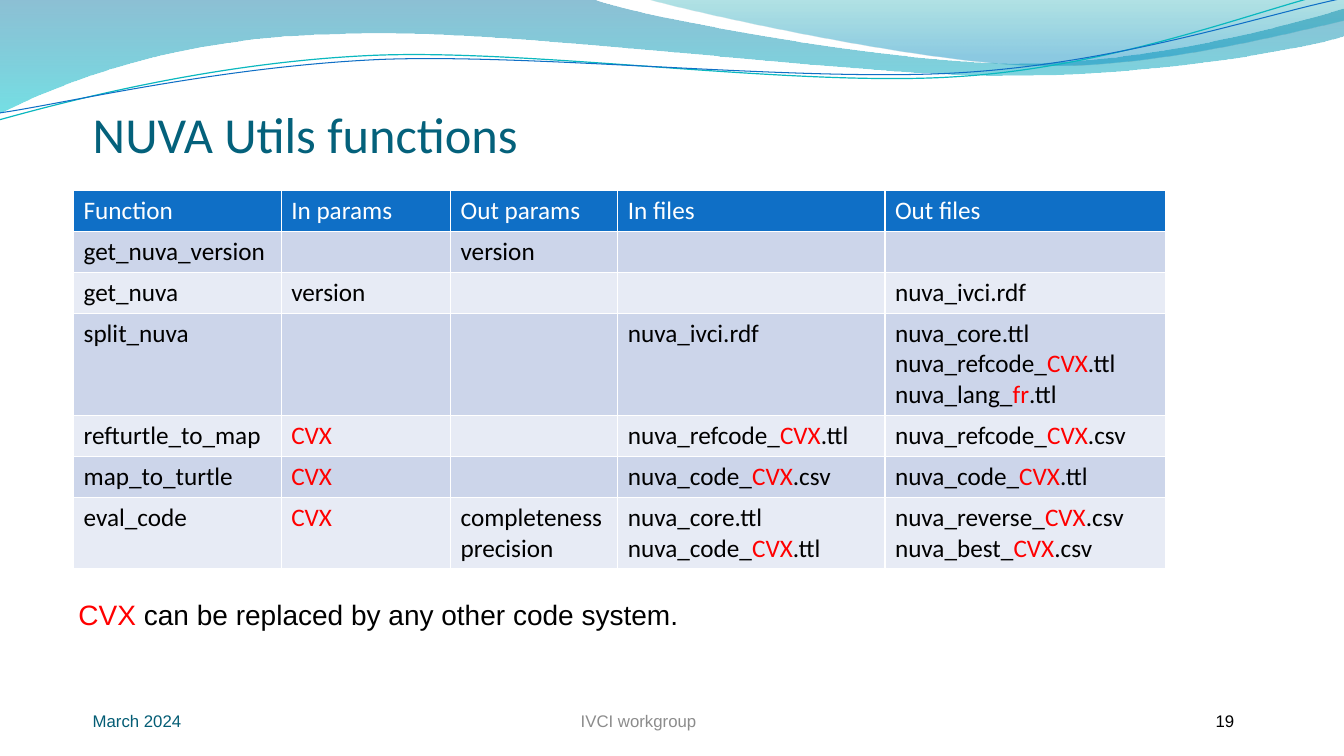
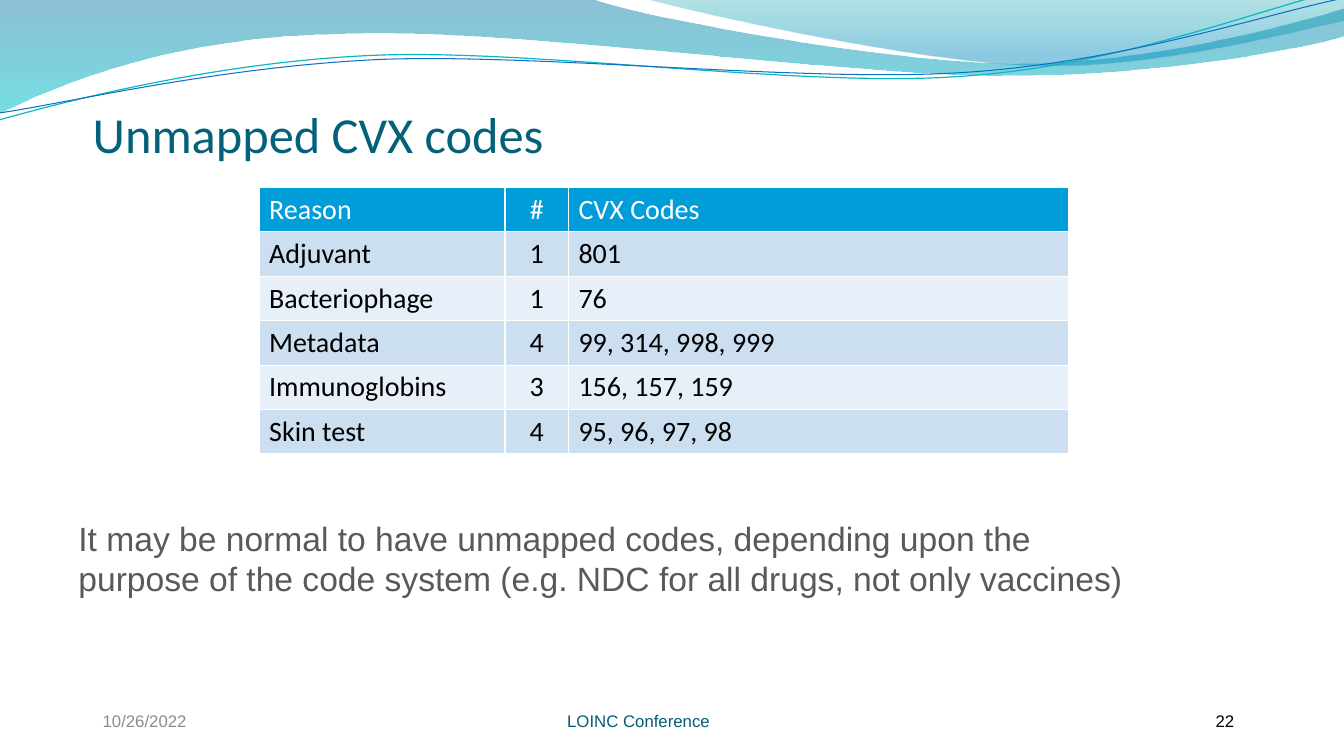
from collections import namedtuple
from math import cos, radians, sin

from lxml.etree import SubElement
from pptx import Presentation
from pptx.dml.color import RGBColor
from pptx.enum.text import MSO_ANCHOR, MSO_AUTO_SIZE, PP_ALIGN
from pptx.oxml.ns import qn
from pptx.util import Inches, Pt

# The slide is a grid of 40/3 columns by 7.5 rows, each one inch.
Box = namedtuple("Box", "left top width height")
SLIDE_WIDTH, SLIDE_HEIGHT = 40 / 3, 7.5
TITLE_BOX = Box(0.92, 0.77, 11.75, 0.85)
DATE_BOX = Box(0.92, 6.95, 3, 0.4)
FOOTER_BOX = Box(3.89, 6.95, 4.89, 0.4)
NUMBER_BOX = Box(11.56, 6.95, 1.11, 0.4)
ROW_HEIGHT = 0.4

HEADING_FONT, TEXT_FONT = "Calibri", "Arial"
BLACK, WHITE, RED = "000000", "FFFFFF", "FF0000"
TITLE_TEAL, FOOTER_TEAL = "04617B", "045D75"
FOOTER_GRAY, NOTE_GRAY = "8C8C8C", "595959"
CORE_COLORS = ("0F6FC6", "CCD5EA", "E7EBF5")
REASON_COLORS = ("009DD9", "CCDFF1", "E7EFF8")
FLUSH = (0, 0, 0, 0)
PADDED = (0.1, 0.05, 0.1, 0.05)

# Each band: outline of lines (one point) and curves (three points), then
# gradient stops as position, colour and opacity.
BANDS = [
    ([[(0, 0)], [(5.87, -0.01)],
      [(6.34, 0.17), (8.85, 0.63), (10.11, 0.63)],
      [(11.38, 0.63), (12.78, 0.26), (13.33, 0.09)], [(13.35, 0.36)],
      [(13.11, 0.44), (11.6, 0.76), (9.94, 0.75)],
      [(8.29, 0.75), (5.09, 0.28), (3.43, 0.34)],
      [(1.72, 0.36), (0.61, 0.83), (-0.01, 1.13)], [(0, 0)]],
     [(0, "0074A1", 45), (1, "00C6CF", 55)]),
    ([[(6.39, -0.01)],
      [(6.79, 0.11), (9.09, 0.62), (10.25, 0.65)],
      [(11.41, 0.69), (12.82, 0.32), (13.33, 0.21)], [(13.33, 0)],
      [(6.39, -0.01)]],
     [(0, "00A1A9", 30), (0.8, "008BBF", 45)]),
]
# Each strand: outline, centre of its turn, colour and line width.
STRAND_TURN = -2.7
STRANDS = [
    ([[(-0.01, 1.19)],
      [(0.64, 1.01), (2.11, 0.62), (3.69, 0.55)],
      [(5.27, 0.48), (7.9, 0.87), (9.5, 0.76)],
      [(11.1, 0.66), (12.52, 0.08), (13.31, -0.1)]],
     (6.65, 0.57), "0AB8BF", 0.85),
    ([[(0, 1.12)],
      [(0.63, 1.03), (2.18, 0.66), (3.78, 0.59)],
      [(5.37, 0.53), (7.96, 0.82), (9.55, 0.72)],
      [(11.15, 0.62), (12.55, 0.14), (13.34, -0.02)]],
     (6.67, 0.59), "0F6FC6", 0.75),
]

# Text between asterisks takes the accent colour, a bar breaks the line.
FUNCTION_ROWS = [
    ("Function", "In params", "Out params", "In files", "Out files"),
    ("get_nuva_version", "", "version", "", ""),
    ("get_nuva", "version", "", "", "nuva_ivci.rdf"),
    ("split_nuva", "", "", "nuva_ivci.rdf",
     "nuva_core.ttl|nuva_refcode_*CVX*.ttl\nnuva_lang_*fr*.ttl"),
    ("refturtle_to_map", "*CVX*", "", "nuva_refcode_*CVX*.ttl",
     "nuva_refcode_*CVX*.csv"),
    ("map_to_turtle", "*CVX*", "", "nuva_code_*CVX*.csv",
     "nuva_code_*CVX*.ttl"),
    ("eval_code", "*CVX*", "completeness|precision",
     "nuva_core.ttl\nnuva_code_*CVX*.ttl",
     "nuva_reverse_*CVX*.csv|nuva_best_*CVX*.csv"),
]
REASON_ROWS = [
    ("Reason", "#", "CVX Codes"),
    ("Adjuvant", "1", "801"),
    ("Bacteriophage", "1", "76"),
    ("Metadata", "4", "99, 314, 998, 999"),
    ("Immunoglobins", "3", "156, 157, 159"),
    ("Skin test", "4", "95, 96, 97, 98"),
]


def rgb(color):
    return RGBColor.from_string(color)


def emu(box):
    return [Inches(length) for length in box]


def write_text(frame, text, font=TEXT_FONT, size=12, color=BLACK, accent=RED,
               align=PP_ALIGN.LEFT):
    """Write one paragraph per line, with *marked* spans in the accent."""
    for index, content in enumerate(text.split("\n")):
        para = frame.add_paragraph() if index else frame.paragraphs[0]
        para.alignment = align
        for row, line in enumerate(content.split("|")):
            if row:
                para.add_line_break()
            for part, words in enumerate(line.split("*")):
                if words:
                    span = para.add_run()
                    span.text = words
                    span.font.name = font
                    span.font.size = Pt(size)
                    span.font.bold = False
                    span.font.color.rgb = rgb(accent if part % 2 else color)


def set_frame(frame, inset, anchor, wrap=True):
    frame.word_wrap = wrap
    frame.vertical_anchor = anchor
    (frame.margin_left, frame.margin_top,
     frame.margin_right, frame.margin_bottom) = emu(inset)


def add_text(page, box, text, inset=PADDED, anchor=MSO_ANCHOR.TOP, wrap=True,
             grow=False, **style):
    frame = page.shapes.add_textbox(*emu(box)).text_frame
    set_frame(frame, inset, anchor, wrap)
    if grow:
        frame.auto_size = MSO_AUTO_SIZE.SHAPE_TO_FIT_TEXT
    write_text(frame, text, **style)


def add_outline(page, outline, close):
    """Draw straight segments, then join each group of three into a curve."""
    start, *others = [emu(point) for segment in outline for point in segment]
    builder = page.shapes.build_freeform(*start)
    builder.add_line_segments(others, close=close)
    shape = builder.convert_to_shape()
    shape.shadow.inherit = False
    lines = iter(list(shape.element.iter(qn("a:lnTo"))))
    for segment in outline[1:]:
        group = [next(lines) for _ in segment]
        if len(group) == 3:
            curve = SubElement(group[0].getparent(), qn("a:cubicBezTo"))
            group[0].addprevious(curve)
            for line in group:
                curve.append(line[0])
                line.getparent().remove(line)
    return shape


def add_band(page, outline, stops):
    band = add_outline(page, outline, True)
    band.line.fill.background()
    band.fill.gradient()
    band.fill.gradient_angle = 270
    for stop, (position, color, _) in zip(band.fill.gradient_stops, stops):
        stop.position = position
        stop.color.rgb = rgb(color)
    for node, (_, _, opacity) in zip(band.element.iter(qn("a:srgbClr")), stops):
        SubElement(node, qn("a:alpha")).set("val", str(opacity * 1000))
    return band


def turn(point, center, degrees):
    x, y = point[0] - center[0], point[1] - center[1]
    c, s = cos(radians(degrees)), sin(radians(degrees))
    return center[0] + x * c - y * s, center[1] + x * s + y * c


def add_strand(page, outline, center, color, width):
    level = [[turn(point, center, -STRAND_TURN) for point in segment]
             for segment in outline]
    strand = add_outline(page, level, False)
    strand.rotation = STRAND_TURN
    strand.fill.background()
    strand.line.color.rgb = rgb(color)
    strand.line.width = Pt(width)
    return strand


def decorate_master(master, page):
    """Draw the waves on a page, then move them behind everything on the master."""
    waves = [add_band(page, *band) for band in BANDS]
    waves += [add_strand(page, *strand) for strand in STRANDS]
    for index, wave in enumerate(waves):
        next(wave.element.iter(qn("p:cNvPr"))).set("id", str(100 + index))
        master.shapes.element.insert(2 + index, wave.element)


def add_title(page, box, text):
    title = page.shapes.title
    title.left, title.top, title.width, title.height = emu(box)
    set_frame(title.text_frame, (0, 0.05, 0, 0), MSO_ANCHOR.BOTTOM)
    write_text(title.text_frame, text, font=HEADING_FONT, size=36,
               color=TITLE_TEAL)


def add_footer(page, date, footer, number):
    """Date and footer are each a text, a colour and an inset."""
    parts = [(DATE_BOX, date, PP_ALIGN.LEFT),
             (FOOTER_BOX, footer, PP_ALIGN.CENTER),
             (NUMBER_BOX, (number, BLACK, (0.5, 0, 0, 0)), PP_ALIGN.LEFT)]
    for box, (text, color, inset), align in parts:
        add_text(page, box, text, inset=inset, anchor=MSO_ANCHOR.MIDDLE,
                 color=color, align=align)


def add_grid(page, box, widths, rows, colors, size, centered=()):
    """Add a table whose first row is a header over two alternating fills."""
    holder = page.shapes.add_table(len(rows), len(widths), *emu(box))
    table = holder.table
    for column, width in zip(table.columns, widths):
        column.width = Inches(width)
    for row in table.rows:
        row.height = Inches(ROW_HEIGHT)
    holder.height = Inches(box.height)
    header, odd, even = colors
    for r, texts in enumerate(rows):
        fill = header if r == 0 else odd if r % 2 else even
        for c, text in enumerate(texts):
            cell = table.cell(r, c)
            cell.fill.solid()
            cell.fill.fore_color.rgb = rgb(fill)
            write_text(cell.text_frame, text, font=HEADING_FONT, size=size,
                       color=BLACK if r else WHITE,
                       align=PP_ALIGN.CENTER if c in centered else PP_ALIGN.LEFT)


def add_page(deck, title):
    page = deck.slides.add_slide(deck.slide_layouts.get_by_name("Title Only"))
    add_title(page, TITLE_BOX, title)
    return page


def add_functions_page(deck):
    page = add_page(deck, "NUVA Utils functions")
    add_grid(page, Box(0.73, 1.89, 10.84, 3.73), (2.06, 1.68, 1.66, 2.65, 2.78),
             FUNCTION_ROWS, CORE_COLORS, 18)
    add_text(page, Box(0.68, 5.88, 6.2, 0.44),
             "*CVX* can be replaced by any other code system.", wrap=False,
             grow=True, size=20)
    add_footer(page, ("March 2024", FOOTER_TEAL, FLUSH),
               ("IVCI workgroup", FOOTER_GRAY, PADDED), "19")
    return page


def add_unmapped_page(deck):
    page = add_page(deck, "Unmapped CVX codes")
    add_grid(page, Box(2.57, 1.86, 8.03, 2.6), (2.44, 0.63, 4.96), REASON_ROWS,
             REASON_COLORS, 20, centered=(1,))
    add_text(page, Box(0.68, 5.09, 10.64, 0.91),
             "It may be normal to have unmapped codes, depending upon the "
             "purpose of the code system (e.g. NDC for all drugs, not only "
             "vaccines)", grow=True, size=24, color=NOTE_GRAY)
    add_footer(page, ("10/26/2022", FOOTER_GRAY, PADDED),
               ("LOINC Conference", FOOTER_TEAL, FLUSH), "22")


def main():
    deck = Presentation()
    deck.slide_width, deck.slide_height = Inches(SLIDE_WIDTH), Inches(SLIDE_HEIGHT)
    first_page = add_functions_page(deck)
    decorate_master(deck.slide_master, first_page)
    add_unmapped_page(deck)
    deck.save("out.pptx")


if __name__ == "__main__":
    main()
